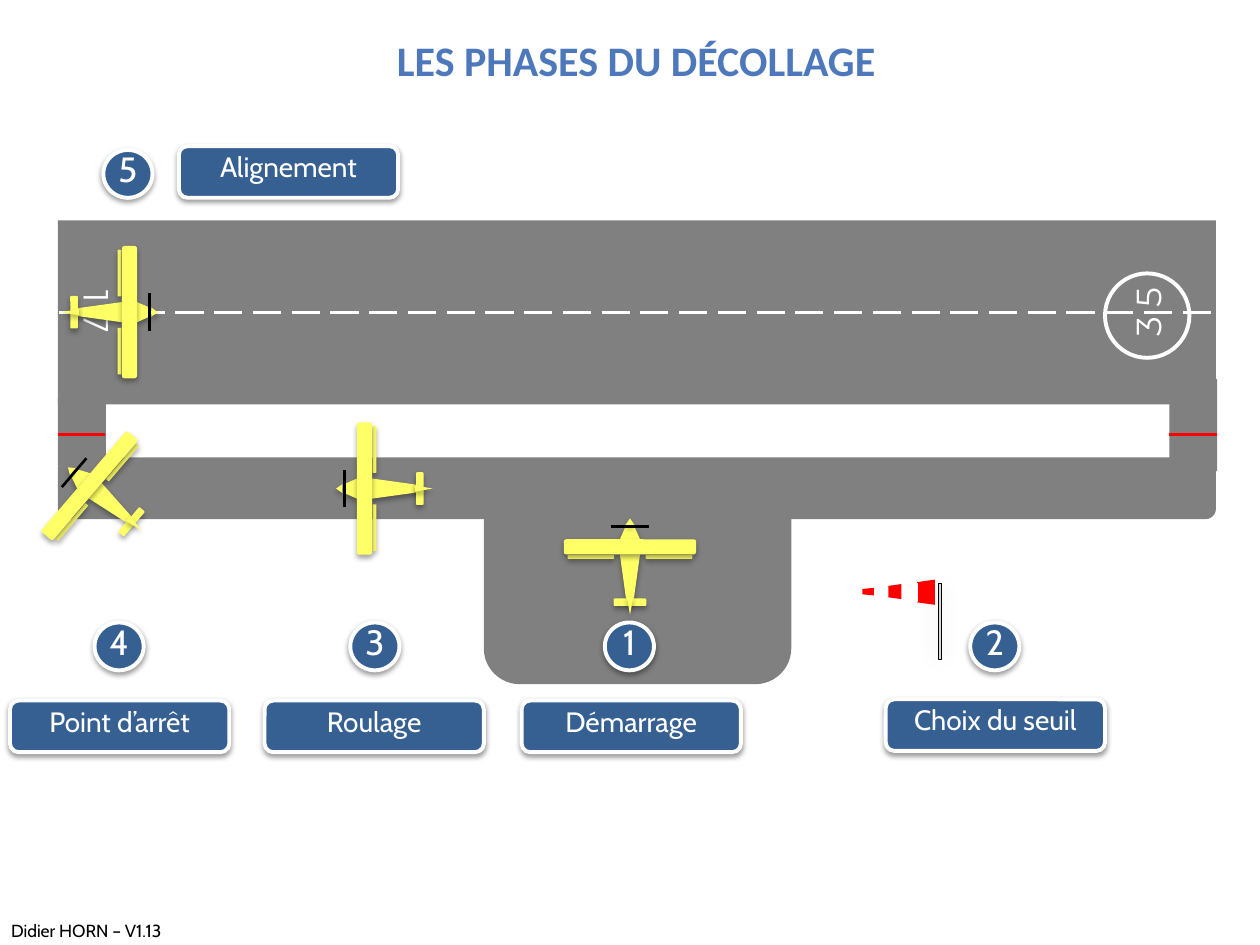
from lxml import etree
from pptx import Presentation
from pptx.dml.color import RGBColor
from pptx.enum.dml import MSO_LINE as Dash
from pptx.enum.shapes import MSO_CONNECTOR as Connector, MSO_SHAPE as Shape
from pptx.enum.text import MSO_ANCHOR as Anchor, PP_ALIGN as Align
from pptx.oxml.ns import qn
from pptx.util import Inches, Pt

GREY, YELLOW, BLUE = "808080", "FFFF66", "376092"
WHITE, RED, BLACK = "FFFFFF", "FF0000", "000000"
# Shadows: opacity %, blur pt, distance pt, direction in degrees
PLANE_SHADOW = (35, 3.1, 1.8, 90)
LABEL_SHADOW = (38, 3.1, 1.6, 90)
POLE_SHADOW = (15, 12, 1, 146)


def paint(item, fill=None, line=None, width=1, shadow=None):
    """Set fill, line and shadow; connectors have no fill."""
    if fill:
        item.fill.solid()
        item.fill.fore_color.rgb = RGBColor.from_string(fill)
    elif hasattr(item, "fill"):
        item.fill.background()
    if line:
        item.line.color.rgb = RGBColor.from_string(line)
        item.line.width = Pt(width)
    else:
        item.line.fill.background()
    effects = etree.SubElement(item._element.spPr, qn("a:effectLst"))
    if shadow:
        opacity, blur, distance, angle = shadow
        outer = etree.SubElement(
            effects, qn("a:outerShdw"), blurRad=str(Pt(blur)), dist=str(Pt(distance)),
            dir=str(angle * 60000), algn="ctr", rotWithShape="0")
        color = etree.SubElement(outer, qn("a:srgbClr"), val=BLACK)
        etree.SubElement(color, qn("a:alpha"), val=str(opacity * 1000))


def write(box, text, size, font, color, align=Align.CENTER):
    """Put one formatted paragraph in a box and return it."""
    box.text_frame.word_wrap = True
    para = box.text_frame.paragraphs[0]
    para.text = text
    para.alignment = align
    span = para.runs[0]
    span.font.size, span.font.name = Pt(size), font
    span.font.color.rgb = RGBColor.from_string(color)
    return para


deck = Presentation()
deck.slide_width, deck.slide_height = Inches(10), Inches(7.5)
page = deck.slides.add_slide(deck.slide_layouts[6])
shapes = page.shapes

# Footer and title
footer = shapes.add_textbox(Inches(-0.01), Inches(7.25), Inches(1.5), Inches(0.27))
write(footer, "Didier HORN – V1.13 ©", 10, "Cabin", BLACK, Align.LEFT)
title = shapes.add_textbox(Inches(0.68), Inches(0.27), Inches(8.74), Inches(0.47))
title_para = write(title, "LES PHASES DU DÉCOLLAGE", 24, "Calibri", "4D79BC")
title_para.line_spacing = 0.9
title_para.runs[0].font.bold = True

# Right link, taxiway, apron, left link and runway
for kind, *place in (
    (Shape.RECTANGLE, 9.28, 3.01, 0.38, 0.73),
    (Shape.ROUNDED_RECTANGLE, 0.46, 3.63, 9.19, 0.49),
    (Shape.ROUNDED_RECTANGLE, 3.84, 3.72, 2.44, 1.71),
    (Shape.RECTANGLE, 0.46, 3.16, 0.38, 0.53),
    (Shape.RECTANGLE, 0.46, 1.75, 9.19, 1.46),
):
    paint(shapes.add_shape(kind, *map(Inches, place)), GREY)

# Centre line and holding-point lines
for left, right, y, color, dash in (
    (0.47, 9.66, 2.48, WHITE, Dash.LONG_DASH),
    (0.46, 0.83, 3.45, RED, None),
    (9.28, 9.66, 3.45, RED, None),
):
    marking = shapes.add_connector(
        Connector.STRAIGHT, Inches(left), Inches(y), Inches(right), Inches(y))
    paint(marking, line=color, width=2)
    if dash:
        marking.line.dash_style = dash

# Runway numbers, and the ring around the chosen one
for text, left, angle in (("1 7", 0.1, 90), ("3 5", 8.43, 270)):
    number = shapes.add_textbox(Inches(left), Inches(2.26), Inches(1.35), Inches(0.43))
    number.rotation = angle
    write(number, text, 20, "Montserrat", WHITE)
ring = shapes.add_shape(
    Shape.OVAL, Inches(8.77), Inches(2.17), Inches(0.67), Inches(0.67))
paint(ring, line=WHITE, width=2.25)

# Windsock: pole, then bands from the mouth to the tip
windsock = shapes.add_group_shape().shapes
pole = windsock.add_shape(
    Shape.RECTANGLE, Inches(7.45), Inches(4.63), Inches(0.02), Inches(0.6))
paint(pole, "D9D9D9", BLACK, 0.25, POLE_SHADOW)
for color, *place in (
    (RED, 7.25, 4.63, 0.2, 0.14),
    (WHITE, 7.15, 4.64, 0.15, 0.12),
    (RED, 7.04, 4.64, 0.12, 0.11),
    (WHITE, 6.95, 4.64, 0.09, 0.11),
    (RED, 6.86, 4.65, 0.06, 0.09),
):
    band = windsock.add_shape(Shape.TRAPEZOID, *map(Inches, place))
    band.adjustments[0] = 0.14
    band.rotation = 270
    paint(band, color)

# Planes: drawn nose up around (0, 0), then moved and turned as a group
outlines = (
    ((-0.08, -0.1), (-0.03, 0.26), (0.03, 0.26), (0.08, -0.1)),      # fuselage
    ((-0.08, -0.22), (-0.04, -0.31), (0.04, -0.31), (0.08, -0.22)),  # cowling
)
parts = (
    (Shape.ROUNDED_RECTANGLE, 0, 0.28, 0.26, 0.06, 0),       # tailplane
    (Shape.ISOSCELES_TRIANGLE, 0, 0.31, 0.05, 0.14, 180),    # fin
    (Shape.ROUNDED_RECTANGLE, -0.31, -0.08, 0.37, 0.03, 0),  # left flap
    (Shape.ROUNDED_RECTANGLE, 0.31, -0.08, 0.37, 0.03, 0),   # right flap
    (Shape.ISOSCELES_TRIANGLE, 0, -0.36, 0.07, 0.05, 0),     # nose
    (Shape.ROUNDED_RECTANGLE, 0, -0.16, 1.05, 0.12, 0),      # wing
)
for center_x, center_y, angle in (
    (5, 4.5, 0), (3.05, 3.88, 270), (0.83, 3.96, 310.5), (0.87, 2.48, 90),
):
    plane = shapes.add_group_shape()
    for outline in outlines:
        points = [(Inches(center_x + x), Inches(center_y + y)) for x, y in outline]
        builder = plane.shapes.build_freeform(*points[0])
        builder.add_line_segments(points[1:], close=True)
        paint(builder.convert_to_shape(), YELLOW, shadow=PLANE_SHADOW)
    propeller = plane.shapes.add_connector(
        Connector.STRAIGHT, Inches(center_x - 0.15), Inches(center_y - 0.32),
        Inches(center_x + 0.15), Inches(center_y - 0.32))
    paint(propeller, line=BLACK, width=1.5)
    for kind, x, y, width, height, turn in parts:
        part = plane.shapes.add_shape(
            kind, Inches(center_x + x - width / 2), Inches(center_y + y - height / 2),
            Inches(width), Inches(height))
        part.rotation = turn
        paint(part, YELLOW, shadow=PLANE_SHADOW)
    plane.rotation = angle

# Phases: numbered badge and label
for number, text, badge_x, badge_y, label_x, label_y in (
    (1, "Démarrage", 4.8, 4.94, 4.14, 5.56),
    (2, "Choix du seuil", 7.7, 4.94, 7.03, 5.55),
    (3, "Roulage", 2.78, 4.94, 2.1, 5.56),
    (4, "Point d’arrêt", 0.75, 4.94, 0.08, 5.56),
    (5, "Alignement", 0.82, 1.19, 1.42, 1.16),
):
    badge = shapes.add_shape(
        Shape.OVAL, Inches(badge_x), Inches(badge_y), Inches(0.39), Inches(0.38))
    label = shapes.add_shape(
        Shape.ROUNDED_RECTANGLE, Inches(label_x), Inches(label_y),
        Inches(1.74), Inches(0.41))
    for box, words, size, anchor in (
        (badge, str(number), 20, Anchor.BOTTOM), (label, text, 16, Anchor.TOP),
    ):
        paint(box, BLUE, WHITE, 2.25, LABEL_SHADOW)
        write(box, words, size, "Cabin", WHITE)
        frame = box.text_frame
        frame.vertical_anchor = anchor
        frame.margin_left = frame.margin_right = Inches(0.01)
        frame.margin_top = frame.margin_bottom = Inches(0.01)

deck.save("out.pptx")
